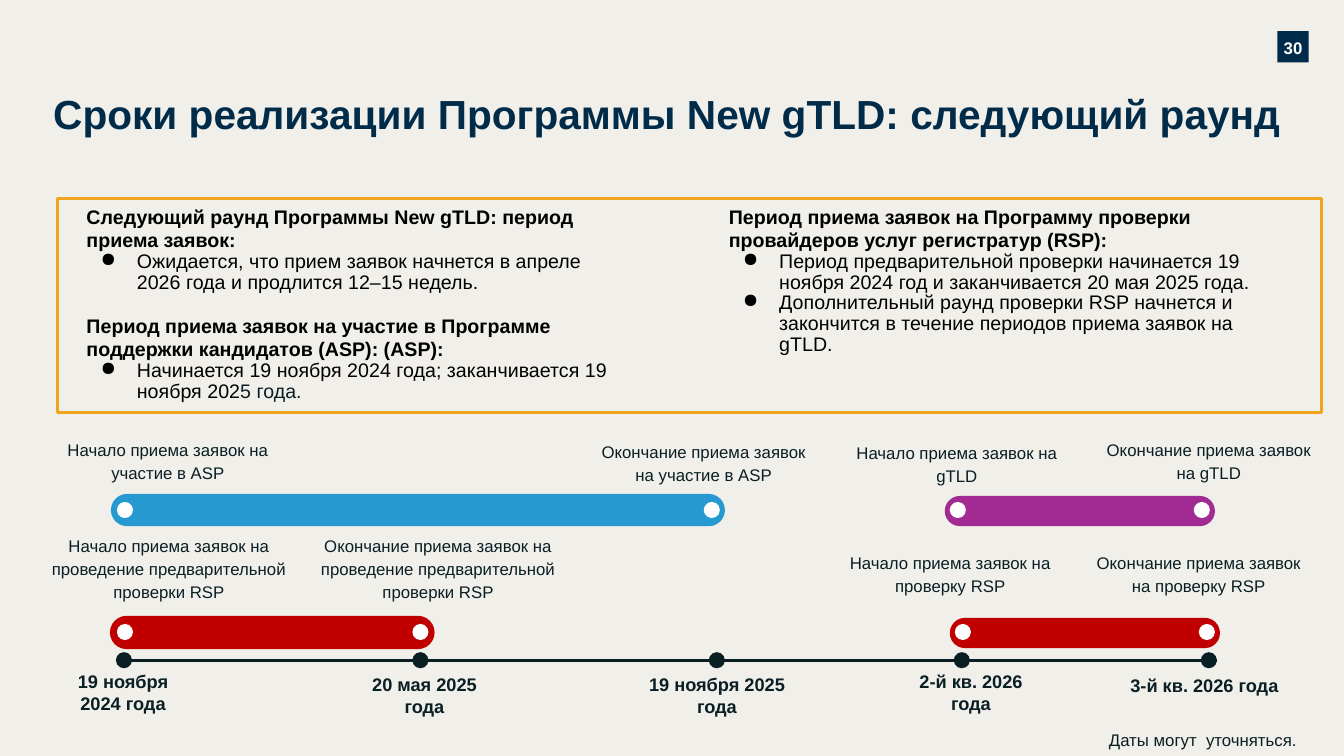
import pptx
import pptx.util
import pptx.dml.color
import pptx.enum.shapes
import pptx.enum.text
import pptx.oxml.ns
import lxml.etree

Inches = pptx.util.Inches
Pt = pptx.util.Pt
RGBColor = pptx.dml.color.RGBColor
MSO_SHAPE = pptx.enum.shapes.MSO_SHAPE
PP_ALIGN = pptx.enum.text.PP_ALIGN
MSO_ANCHOR = pptx.enum.text.MSO_ANCHOR
qn = pptx.oxml.ns.qn

SAND = RGBColor(0xF1, 0xEF, 0xEA)
NAVY = RGBColor(0x00, 0x2B, 0x49)
BADGE_NAVY = RGBColor(0x00, 0x2A, 0x49)
INK = RGBColor(0x0A, 0x1F, 0x24)
AXIS_INK = RGBColor(0x08, 0x1E, 0x23)
BLACK = RGBColor(0x00, 0x00, 0x00)
WHITE = RGBColor(0xFF, 0xFF, 0xFF)
BLUE = RGBColor(0x25, 0x99, 0xD0)
RED = RGBColor(0xC0, 0x00, 0x00)
PURPLE = RGBColor(0xA1, 0x2B, 0x93)
AMBER = RGBColor(0xF3, 0xA4, 0x1E)

DOT = 0.16


def apply(target, values):
    for name, value in values.items():
        setattr(target, name, value)


class TimelineSlide:
    font_name = "Arial"

    def __init__(self, deck):
        self.slide = deck.slides.add_slide(deck.slide_layouts[6])
        self.slide.background.fill.solid()
        self.slide.background.fill.fore_color.rgb = SAND

    def words(self, paragraph, text, size, color, bold=False):
        run = paragraph.add_run()
        run.text = text
        apply(run.font, {"name": self.font_name, "size": Pt(size), "bold": bold})
        run.font.color.rgb = color

    def frame(self, shape, inset_x, inset_y, anchor=MSO_ANCHOR.TOP):
        apply(shape.text_frame, {
            "word_wrap": True, "vertical_anchor": anchor,
            "margin_left": Inches(inset_x), "margin_right": Inches(inset_x),
            "margin_top": Inches(inset_y), "margin_bottom": Inches(inset_y),
        })
        return shape.text_frame

    def text(self, box, text, size, color, bold=False, insets=(0, 0), **layout):
        label = self.slide.shapes.add_textbox(*map(Inches, box))
        paragraph = self.frame(label, *insets).paragraphs[0]
        apply(paragraph, layout)
        self.words(paragraph, text, size, color, bold)

    def shape(self, kind, box, fill=None, outline=None):
        shape = self.slide.shapes.add_shape(kind, *map(Inches, box))
        shape.shadow.inherit = False
        if fill is None:
            shape.fill.background()
        else:
            shape.fill.solid()
            shape.fill.fore_color.rgb = fill
        if outline is None:
            shape.line.fill.background()
        else:
            shape.line.color.rgb = outline
            shape.line.width = Pt(2)
        return shape

    def badge(self, box, number):
        square = self.shape(MSO_SHAPE.RECTANGLE, box, BADGE_NAVY)
        paragraph = self.frame(square, 0, 0, MSO_ANCHOR.MIDDLE).paragraphs[0]
        apply(paragraph, {"alignment": PP_ALIGN.CENTER, "line_spacing": 1.08})
        self.words(paragraph, number, 12, WHITE, True)

    def dot(self, left, top, color):
        self.shape(MSO_SHAPE.OVAL, (left, top, DOT, DOT), color)

    def period(self, box, color, dot_top, dot_lefts):
        bar = self.shape(MSO_SHAPE.ROUNDED_RECTANGLE, box, color)
        bar.adjustments[0] = 0.5
        for left in dot_lefts:
            self.dot(left, dot_top, WHITE)

    def axis(self, start, end, top):
        line = self.slide.shapes.add_connector(
            pptx.enum.shapes.MSO_CONNECTOR.STRAIGHT,
            *map(Inches, (start, top, end, top)))
        line.line.color.rgb = AXIS_INK
        line.line.width = Pt(2.25)
        lxml.etree.SubElement(line._element.spPr, qn("a:effectLst"))

    def bullet(self, paragraph):
        properties = paragraph._p.get_or_add_pPr()
        properties.set("marL", str(Inches(0.5)))
        properties.set("indent", str(Inches(-0.36)))
        color = lxml.etree.SubElement(properties, qn("a:buClr"))
        lxml.etree.SubElement(color, qn("a:srgbClr"), val=str(BLACK))
        lxml.etree.SubElement(properties, qn("a:buChar"), char="●")
        paragraph.line_spacing = Pt(14.8)

    def sections(self, box, sections):
        column = self.frame(
            self.slide.shapes.add_textbox(*map(Inches, box)), 0.1, 0.1)
        for index, (heading, points) in enumerate(sections):
            paragraph = column.add_paragraph() if index else column.paragraphs[0]
            if index:
                paragraph.space_before = Pt(14.8)
            self.words(paragraph, heading, 14, BLACK, True)
            for point in points:
                paragraph = column.add_paragraph()
                self.bullet(paragraph)
                for fragment, color in point:
                    self.words(paragraph, fragment, 14, color)


def main():
    deck = pptx.Presentation()
    apply(deck, {"slide_width": Inches(13.33), "slide_height": Inches(7.5)})
    page = TimelineSlide(deck)

    page.badge((12.67, 0.31, 0.31, 0.31), "30")
    page.text((0.43, 0.89, 12.56, 0.49),
              "Сроки реализации Программы New gTLD: следующий раунд",
              29, NAVY, True, (0.1, 0.05), line_spacing=Pt(31))

    page.sections((0.76, 1.93, 5.37, 2.53), [
        ("Следующий раунд Программы New gTLD: период приема заявок:",
         [[("Ожидается, что прием заявок начнется в апреле 2026 года "
            "и продлится 12–15 недель.", BLACK)]]),
        ("Период приема заявок на участие в Программе поддержки "
         "кандидатов (ASP): (ASP):",
         [[("Начинается 19 ноября 2024 года; заканчивается 19 ноября 202", BLACK),
           ("5 года.", INK)]]),
    ])
    page.sections((7.13, 1.93, 5.65, 2.53), [
        ("Период приема заявок на Программу проверки провайдеров услуг "
         "регистратур (RSP):",
         [[("Период предварительной проверки начинается 19 ноября 2024 год "
            "и заканчивается 20 мая 2025 года.", BLACK)],
          [("Дополнительный раунд проверки RSP начнется и закончится "
            "в течение периодов приема заявок на gTLD.", BLACK)]]),
    ])
    page.shape(MSO_SHAPE.RECTANGLE, (0.57, 1.97, 12.54, 2.12), outline=AMBER)

    captions = [
        ((0.49, 4.34, 2.35, 0.46), "Начало приема заявок на участие в ASP"),
        ((5.86, 4.36, 2.24, 0.46), "Окончание приема заявок на участие в ASP"),
        ((8.37, 4.37, 2.24, 0.46), "Начало приема заявок на gTLD"),
        ((10.87, 4.34, 2.24, 0.46), "Окончание приема заявок на gTLD"),
        ((0.49, 5.29, 2.37, 0.68),
         "Начало приема заявок на проведение предварительной проверки RSP"),
        ((3.13, 5.29, 2.43, 0.68),
         "Окончание приема заявок на проведение предварительной проверки RSP"),
        ((8.34, 5.46, 2.17, 0.46), "Начало приема заявок на проверку RSP"),
        ((10.77, 5.46, 2.24, 0.46), "Окончание приема заявок на проверку RSP"),
        ((9.84, 7.21, 4.18, 0.24), "Даты могут  уточняться."),
    ]
    for box, caption in captions:
        page.text(box, caption, 12, INK,
                  alignment=PP_ALIGN.CENTER, line_spacing=1.13)

    page.period((1.1, 4.9, 6.09, 0.32), BLUE, 4.98, (1.16, 6.98))
    page.period((9.37, 4.92, 2.68, 0.3), PURPLE, 4.98, (9.42, 11.84))
    page.period((1.09, 6.11, 3.22, 0.33), RED, 6.19, (1.16, 4.09))
    page.period((9.42, 6.13, 2.68, 0.3), RED, 6.19, (9.47, 11.89))

    page.axis(1.16, 12.07, 6.55)
    milestones = [
        (1.15, (0.49, 6.6, 1.46, 0.3), "19 ноября 2024 года"),
        (4.09, (3.48, 6.63, 1.46, 0.3), "20 мая 2025 года"),
        (7.03, (6.35, 6.63, 1.52, 0.43), "19 ноября 2025 года"),
        (9.46, (8.93, 6.6, 1.4, 0.43), "2-й кв. 2026 года"),
        (11.91, (11.11, 6.64, 1.67, 0.43), "3-й кв. 2026 года"),
    ]
    for dot_left, box, date in milestones:
        page.dot(dot_left, 6.47, INK)
        page.text(box, date, 13, INK, True, (0.08, 0.05),
                  alignment=PP_ALIGN.CENTER)

    deck.save("out.pptx")


if __name__ == "__main__":
    main()
